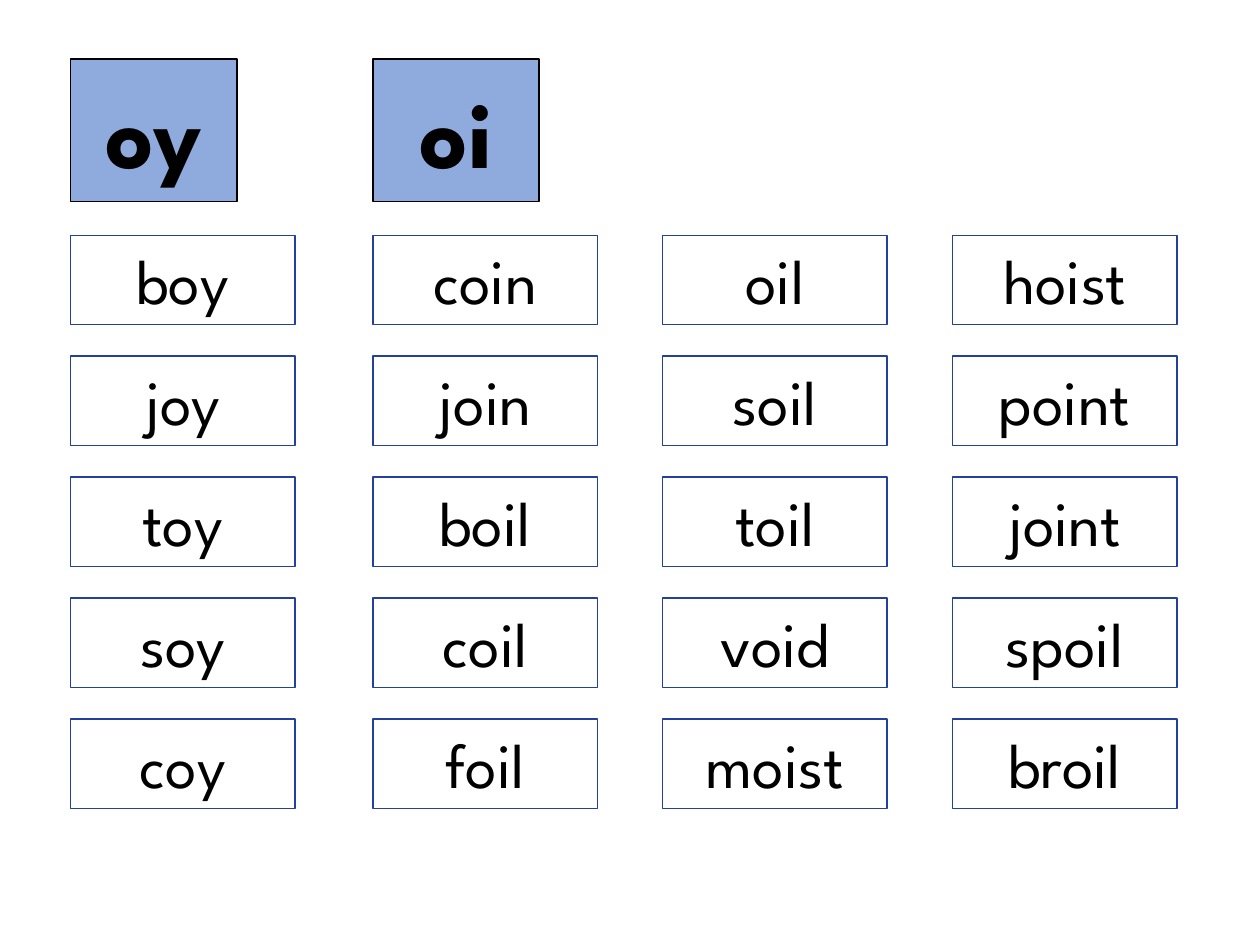
"""Build a word sort slide for the oy and oi spellings."""
import pptx
import pptx.dml.color
import pptx.enum.shapes
import pptx.enum.text
import pptx.util

Pt = pptx.util.Pt
COLOURS = {"heading": "8FAADC", "border": "22409C", "ink": "000000"}
FONT = "League Spartan"
COLUMN_LEFTS = (40.3, 213.1, 378.7, 544.3)
HEADINGS = ("oy", "oi")
WORD_COLUMNS = (
    ("boy", "joy", "toy", "soy", "coy"),
    ("coin", "join", "boil", "coil", "foil"),
    ("oil", "soil", "toil", "void", "moist"),
    ("hoist", "point", "joint", "spoil", "broil"),
)
FIRST_ROW_TOP = 134.4
ROW_STEP = 69.1


def colour(name):
    return pptx.dml.color.RGBColor.from_string(COLOURS[name])


def outline(box, name, width):
    box.line.color.rgb = colour(name)
    box.line.width = Pt(width)


def write(box, text, size, bold=False):
    box.text_frame.word_wrap = True
    para = box.text_frame.paragraphs[0]
    para.text = text
    para.alignment = pptx.enum.text.PP_ALIGN.CENTER
    para.font.name = FONT
    para.font.size = Pt(size)
    para.font.bold = bold
    para.font.color.rgb = colour("ink")


def add_heading(page, left, text):
    box = page.shapes.add_shape(
        pptx.enum.shapes.MSO_SHAPE.RECTANGLE, Pt(left), Pt(33.8), Pt(95), Pt(81.4)
    )
    box.shadow.inherit = False
    box.fill.solid()
    box.fill.fore_color.rgb = colour("heading")
    outline(box, "ink", 1)
    box.text_frame.vertical_anchor = pptx.enum.text.MSO_ANCHOR.MIDDLE
    write(box, text, 54, bold=True)


def add_word(page, left, top, text):
    box = page.shapes.add_textbox(Pt(left), Pt(top), Pt(128.2), Pt(51.1))
    outline(box, "border", 0.75)
    write(box, text, 36)
    box.text_frame.auto_size = pptx.enum.text.MSO_AUTO_SIZE.SHAPE_TO_FIT_TEXT


def main():
    deck = pptx.Presentation()
    deck.slide_width, deck.slide_height = Pt(720), Pt(540)
    page = deck.slides.add_slide(deck.slide_layouts[6])
    for left, words in zip(COLUMN_LEFTS, WORD_COLUMNS):
        for row, word in enumerate(words):
            add_word(page, left, FIRST_ROW_TOP + row * ROW_STEP, word)
    for left, heading in zip(COLUMN_LEFTS, HEADINGS):
        add_heading(page, left, heading)
    deck.save("out.pptx")


if __name__ == "__main__":
    main()
